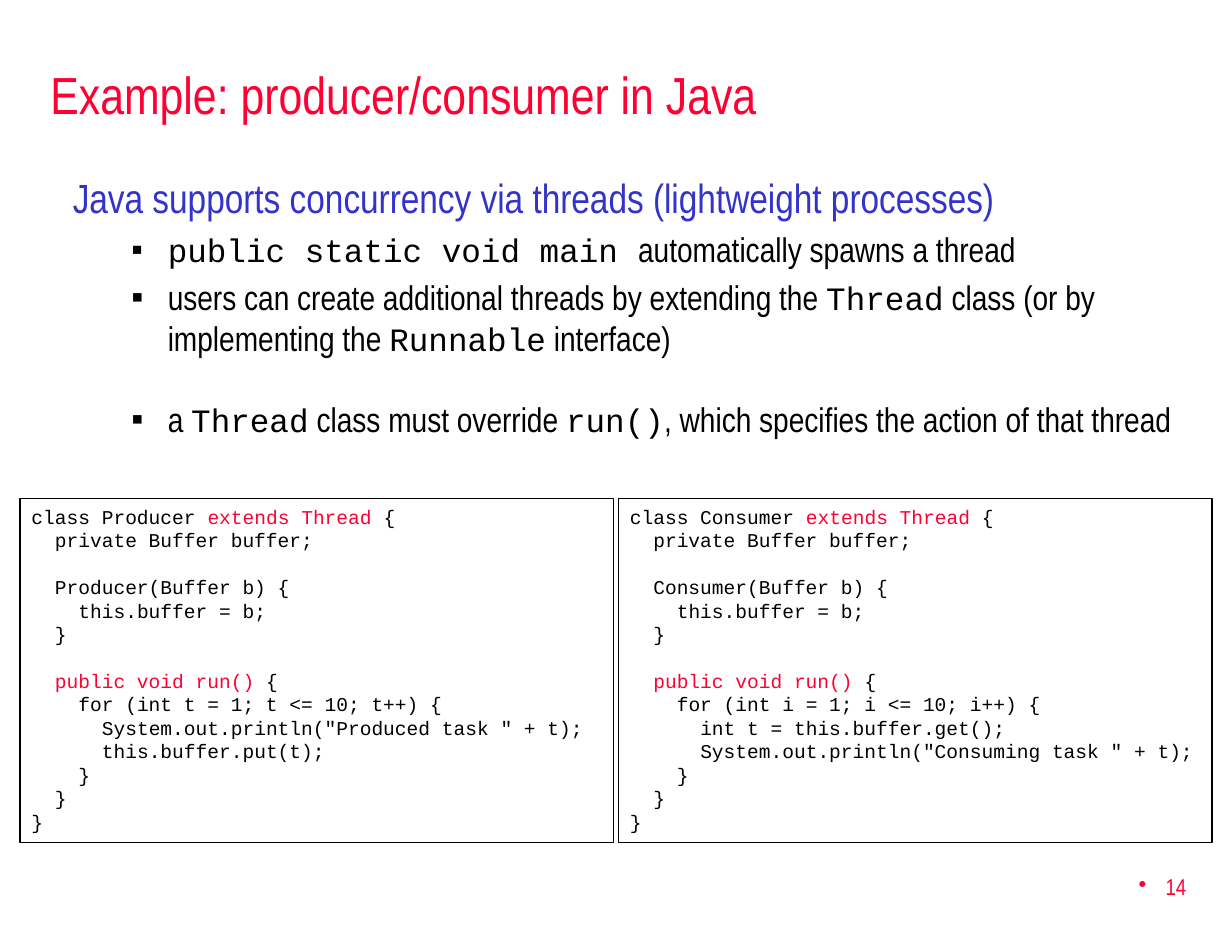
import lxml.etree
import pptx
import pptx.dml.color
import pptx.enum.shapes
import pptx.enum.text
import pptx.oxml.ns
import pptx.util

Inches, Pt = pptx.util.Inches, pptx.util.Pt
ALIGN = pptx.enum.text.PP_ALIGN
ANCHOR = pptx.enum.text.MSO_ANCHOR
RED, BLUE, BLACK = "FF0033", "3333CC", "000000"
NARROW, MONO = "Arial Narrow", "Courier New"
CODE_PITCH = 14.4


def rgb(hex_color):
    return pptx.dml.color.RGBColor.from_string(hex_color)


def set_all(target, values):
    for name, value in values.items():
        setattr(target, name, value)


def class_code(name, counter, statements):
    """Lines of a thread class; the parts between bars are highlighted."""
    return [
        f"class {name} |extends Thread |{{",
        "  private Buffer buffer;",
        "",
        f"  {name}(Buffer b) {{",
        "    this.buffer = b;",
        "  }",
        "",
        "  |public void run() |{",
        f"    for (int {counter} = 1; {counter} <= 10; {counter}++) {{",
        *("      " + statement for statement in statements),
        "    }",
        "  }",
        "}",
    ]


class Slide:
    plain = {"name": NARROW, "size": Pt(21), "color": BLACK}
    inline_code = {"name": MONO, "size": Pt(20), "color": BLACK}
    code = {"name": MONO, "size": Pt(12), "color": BLACK}
    highlight = {**code, "color": RED}
    heading = {"name": NARROW, "size": Pt(25), "color": BLUE}
    title_style = {"name": NARROW, "size": Pt(32), "color": RED}
    number_style = {"name": NARROW, "size": Pt(14), "color": RED}

    def __init__(self, deck):
        self.slide = deck.slides.add_slide(deck.slide_layouts[1])

    def place(self, shape, left, top, width, height, anchor=ANCHOR.TOP):
        set_all(shape, {"left": Inches(left), "top": Inches(top),
                        "width": Inches(width), "height": Inches(height)})
        set_all(shape.text_frame, {"word_wrap": True, "vertical_anchor": anchor,
                                   "auto_size": pptx.enum.text.MSO_AUTO_SIZE.NONE})
        return shape.text_frame

    def add_text(self, paragraph, text, style, alternate=None, **layout):
        """Fill a paragraph; parts between bars take the alternate style."""
        set_all(paragraph, {"alignment": ALIGN.LEFT, **layout})
        for index, part in enumerate(text.split("|")):
            if part:
                run = paragraph.add_run()
                run.text = part
                look = alternate if index % 2 else style
                set_all(run.font, {"name": look["name"], "size": look["size"]})
                run.font.color.rgb = rgb(look["color"])

    def indent(self, paragraph, margin, first=0, bullet=None):
        properties = paragraph._p.get_or_add_pPr()
        properties.set("marL", str(Inches(margin)))
        properties.set("indent", str(Inches(first)))
        tag = "a:buChar" if bullet else "a:buNone"
        mark = lxml.etree.SubElement(properties, pptx.oxml.ns.qn(tag))
        if bullet:
            mark.set("char", bullet)

    def title(self, text):
        frame = self.place(self.slide.shapes.title, 0.33, 0.42, 9.92, 0.75, ANCHOR.MIDDLE)
        self.add_text(frame.paragraphs[0], text, self.title_style)

    def body(self, heading, points):
        frame = self.place(self.slide.placeholders[1], 0.52, 1.42, 9.73, 2.33)
        lead = frame.paragraphs[0]
        self.add_text(lead, heading, self.heading, space_before=Pt(5))
        self.indent(lead, 0.38, -0.38)
        for text, gap in points:
            point = frame.add_paragraph()
            self.add_text(point, text, self.plain, self.inline_code,
                          level=1, space_before=Pt(gap))
            self.indent(point, 0.81, -0.31, "▪")

    def code_box(self, left, lines):
        box = self.slide.shapes.add_shape(
            pptx.enum.shapes.MSO_SHAPE.RECTANGLE, 0, 0, 0, 0)
        frame = self.place(box, left, 4.25, 5.06, 2.93)
        box.shadow.inherit = False
        box.fill.background()
        box.line.color.rgb = rgb(BLACK)
        box.line.width = Pt(0.75)
        paragraph, gap = frame.paragraphs[0], 0
        for number, line in enumerate(lines):
            if not line:
                gap = CODE_PITCH
                continue
            if number:
                paragraph = frame.add_paragraph()
            code = line.lstrip(" ")
            self.add_text(paragraph, code, self.code, self.highlight,
                          line_spacing=Pt(CODE_PITCH), space_before=Pt(gap))
            self.indent(paragraph, 0.1 * (len(line) - len(code)))
            gap = 0

    def page_number(self, text):
        box = self.slide.shapes.add_textbox(0, 0, 0, 0)
        frame = self.place(box, 8.02, 7.29, 2.19, 0.53, ANCHOR.MIDDLE)
        number = frame.paragraphs[0]
        self.add_text(number, text, self.number_style, alignment=ALIGN.RIGHT)
        self.indent(number, 0.23, -0.23, "•")


def main():
    deck = pptx.Presentation()
    set_all(deck, {"slide_width": Inches(10.5), "slide_height": Inches(8)})
    slide = Slide(deck)
    slide.title("Example: producer/consumer in Java")
    slide.body("Java supports concurrency via threads (lightweight processes)", [
        ("|public static void main |automatically spawns a thread", 4.3),
        ("users can create additional threads by extending the |Thread| class "
         "(or by implementing the |Runnable| interface)", 4.3),
        ("a |Thread| class must override |run()|, which specifies the action "
         "of that thread", 24),
    ])
    slide.page_number("14")
    slide.code_box(0.17, class_code("Producer", "t", [
        'System.out.println("Produced task " + t);',
        "this.buffer.put(t);",
    ]))
    slide.code_box(5.27, class_code("Consumer", "i", [
        "int t = this.buffer.get();",
        'System.out.println("Consuming task " + t);',
    ]))
    deck.save("out.pptx")


if __name__ == "__main__":
    main()
